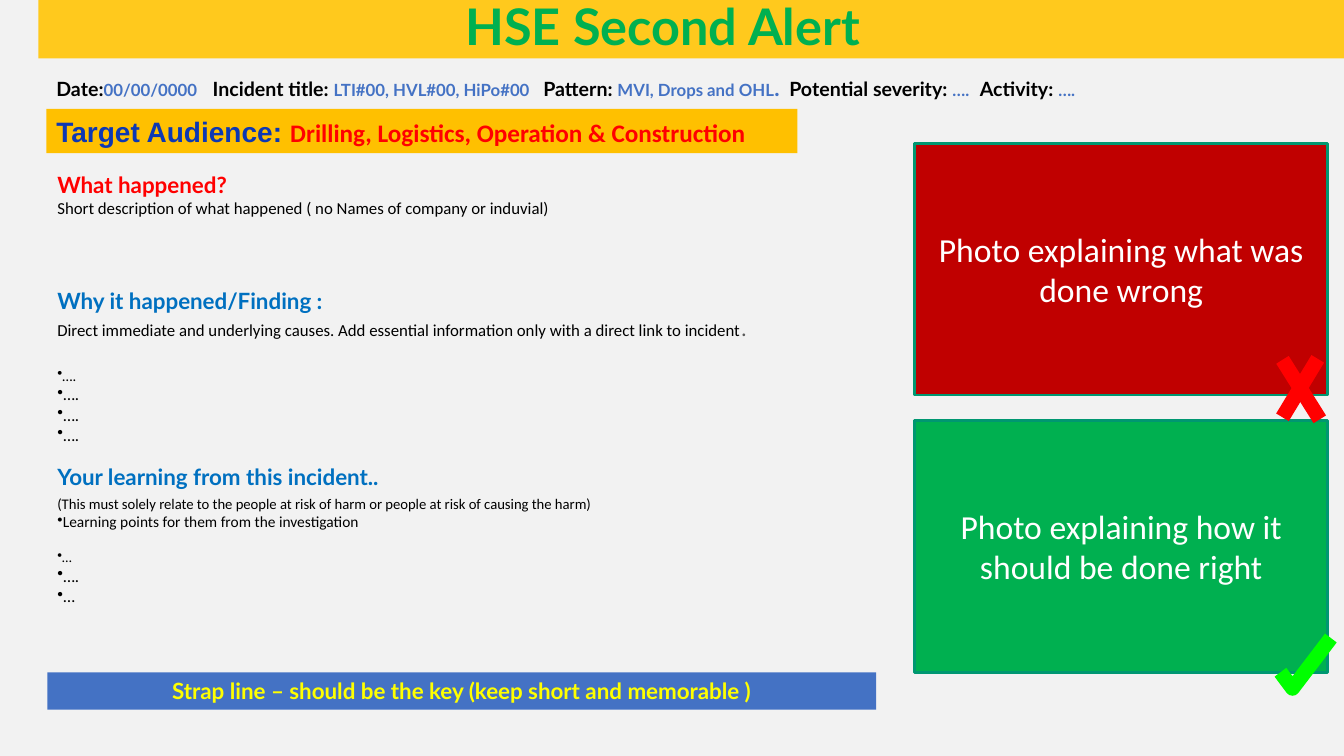
from dataclasses import dataclass

from lxml import etree
from pptx import Presentation
from pptx.dml.color import RGBColor
from pptx.enum import shapes, text
from pptx.oxml import ns
from pptx.util import Inches, Pt


@dataclass(frozen=True)
class Theme:
    page: str = "F2F2F2"
    banner: str = "FFC91D"
    amber: str = "FFC000"
    blue: str = "4472C4"
    heading: str = "0070C0"
    navy: str = "0D38B3"
    red: str = "FF0000"
    wrong: str = "C00000"
    right: str = "00B050"
    tick: str = "00FF00"
    frame: str = "009771"
    yellow: str = "FFFF00"
    grey: str = "595959"
    black: str = "000000"
    white: str = "FFFFFF"
    head_font: str = "Lato"
    body_font: str = "Calibri"
    audience_font: str = "Arial"
    title: float = 36
    photo: float = 24
    audience: float = 20
    audience_list: float = 18
    heading_size: float = 16
    label: float = 14
    body: float = 12
    note: float = 11
    small: float = 10.5
    tiny: float = 10
    mark: float = 10.5


THEME = Theme()


def style(font, size, color, name=None, bold=None):
    font.size = Pt(size)
    font.color.rgb = RGBColor.from_string(color)
    if name:
        font.name = name
    if bold is not None:
        font.bold = bold


def add_span(para, words, *look):
    span = para.add_run()
    span.text = words
    if look:
        style(span.font, *look)


def add_mark(para, tag, **attributes):
    """Append a bullet or tab element to the paragraph properties."""
    props = para._p.get_or_add_pPr()
    return etree.SubElement(props, ns.qn(tag), **attributes)


def add_box(page, left, top, width, height):
    box = page.shapes.add_textbox(*map(Inches, (left, top, width, height)))
    box.text_frame.word_wrap = True
    return box.text_frame


def add_panel(page, left, top, width, height, fill, outline=None,
              align=text.PP_ALIGN.CENTER):
    """Add a filled rectangle and return its text frame."""
    panel = page.shapes.add_shape(
        shapes.MSO_SHAPE.RECTANGLE, *map(Inches, (left, top, width, height)))
    panel.shadow.inherit = False
    panel.fill.solid()
    panel.fill.fore_color.rgb = RGBColor.from_string(fill)
    if outline:
        panel.line.color.rgb = RGBColor.from_string(outline)
        panel.line.width = Pt(2)
    else:
        panel.line.fill.background()
    frame = panel.text_frame
    frame.word_wrap = True
    frame.vertical_anchor = text.MSO_ANCHOR.MIDDLE
    frame.paragraphs[0].alignment = align
    return frame


def add_caption(frame, words, size, color, font, bold):
    para = frame.paragraphs[0]
    add_span(para, words)
    style(para.font, size, color, font, bold)
    return para


def add_report(page):
    t = THEME
    frame = add_box(page, 0.47, 1.65, 8.52, 4.69)

    def line(words, size, gap=0, bullet=False, heading=None):
        para = frame.paragraphs[0] if not frame.text else frame.add_paragraph()
        if bullet:
            add_mark(para, "a:buChar", char="•")
        if gap:
            para.space_before = Pt(gap)
        add_span(para, words)
        style(para.font, size, heading or t.black,
              t.head_font if heading else t.body_font, bool(heading))
        return para

    line("What happened?", t.heading_size, heading=t.red)
    line("Short description of what happened ( no Names of company or induvial)", t.body)
    line("Why it happened/Finding :", t.heading_size, 49, heading=t.heading)
    causes = line("Direct immediate and underlying causes. Add essential information "
                  "only with a direct link to incident", t.body)
    add_span(causes, ".", t.heading_size, t.grey)
    line("….", t.small, 18.5, bullet=True)
    for _ in range(3):
        line("….", t.body, bullet=True)
    line("Your learning from this incident..", t.heading_size, 13.5, heading=t.heading)
    line("(This must solely relate to the people at risk of harm or people at risk "
         "of causing the harm)", t.small, 3)
    line("Learning points for them from the investigation", t.note, bullet=True)
    line("…", t.tiny, 13, bullet=True)
    for words in ("….", "…"):
        line(words, t.body, bullet=True)


def add_details(page):
    """Add the line of incident fields, spaced by tab stops."""
    t = THEME
    para = add_box(page, 0.46, 0.69, 12.72, 0.37).paragraphs[0]
    stops = add_mark(para, "a:tabLst")
    for stop in (1.55, 4.83, 7.27, 9.16):
        etree.SubElement(stops, ns.qn("a:tab"), pos=str(Inches(stop)), algn="l")
    fields = (
        ("Date:", "00/00/0000", ""),
        ("\tIncident title: ", "LTI#00, HVL#00, HiPo#00", ""),
        ("\tPattern: ", "MVI, Drops and OHL", "."),
        ("\tPotential severity: ", "….", ""),
        ("\tActivity: ", "….", ""),
    )
    for label, value, stop in fields:
        add_span(para, label, t.label, t.black)
        add_span(para, value, t.body, t.blue)
        if stop:
            add_span(para, stop, t.heading_size, t.blue)
    para.font.name = t.head_font
    para.font.bold = True


def add_tick(page):
    builder = page.shapes.build_freeform(Inches(12.7), Inches(6.67))
    corners = [(Inches(x), Inches(y)) for x, y in ((12.82, 6.83), (13.2, 6.33))]
    builder.add_line_segments(corners, close=False)
    tick = builder.convert_to_shape()
    tick.shadow.inherit = False
    tick.fill.background()
    tick.line.color.rgb = RGBColor.from_string(THEME.tick)
    tick.line.width = Pt(THEME.mark)


def add_cross(page):
    cross = page.shapes.add_group_shape()
    for ends in ((12.72, 3.57, 13.09, 4.16), (12.72, 4.14, 13.07, 3.56)):
        stroke = cross.shapes.add_connector(
            shapes.MSO_CONNECTOR.STRAIGHT, *map(Inches, ends))
        stroke.line.color.rgb = RGBColor.from_string(THEME.red)
        stroke.line.width = Pt(THEME.mark)
        etree.SubElement(stroke._element.spPr, ns.qn("a:effectLst"))


def main():
    t = THEME
    deck = Presentation()
    deck.slide_width, deck.slide_height = Inches(13.33), Inches(7.5)
    page = deck.slides.add_slide(deck.slide_layouts[6])
    page.background.fill.solid()
    page.background.fill.fore_color.rgb = RGBColor.from_string(t.page)

    add_report(page)
    photos = (("Photo explaining what was done wrong", t.wrong),
              ("Photo explaining how it should be done right", t.right))
    for row, (words, fill) in enumerate(photos):
        frame = add_panel(page, 9.07, 1.42 + 2.75 * row, 4.1, 2.5, fill, t.frame)
        add_caption(frame, words, t.photo, t.white, t.body_font, False)
    add_tick(page)
    add_cross(page)
    add_details(page)

    audience = add_panel(page, 0.46, 1.08, 7.45, 0.44, t.amber,
                         align=text.PP_ALIGN.LEFT).paragraphs[0]
    add_span(audience, "Target Audience: ", t.audience, t.navy, t.audience_font)
    add_span(audience, "Drilling, Logistics, Operation & Construction",
             t.audience_list, t.red, t.body_font)
    audience.font.bold = True

    banner = add_panel(page, 0.38, 0, 12.95, 0.58, t.banner)
    banner.margin_right = Inches(0.66)
    title = add_caption(banner, "HSE Second Alert", t.title, t.right, t.head_font, True)
    title.line_spacing = 0.9
    strap = add_panel(page, 0.47, 6.67, 8.22, 0.37, t.blue)
    add_caption(strap, "Strap line – should be the key (keep short and memorable )",
                t.heading_size, t.yellow, t.head_font, True)
    deck.save("out.pptx")


if __name__ == "__main__":
    main()
